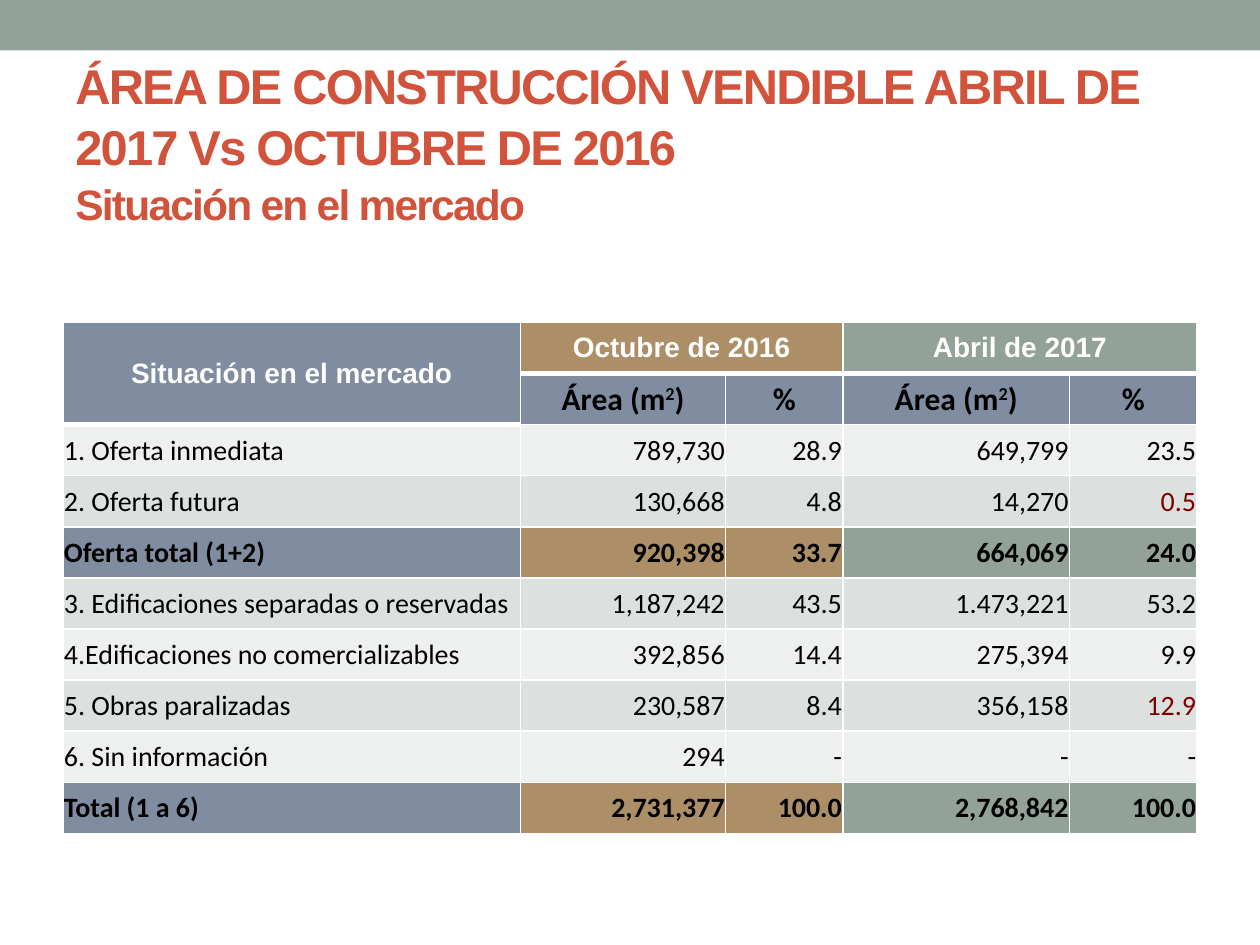
from lxml import etree
from pptx import Presentation
from pptx.dml.color import RGBColor
from pptx.enum.shapes import MSO_SHAPE
from pptx.enum.text import MSO_ANCHOR, PP_ALIGN
from pptx.oxml.ns import qn
from pptx.util import Cm, Pt

RECTANGLE = MSO_SHAPE.RECTANGLE
MIDDLE = MSO_ANCHOR.MIDDLE
LEFT, CENTER, RIGHT, JUSTIFY = (
    PP_ALIGN.LEFT, PP_ALIGN.CENTER, PP_ALIGN.RIGHT, PP_ALIGN.JUSTIFY)

WHITE, BLACK, RED, DARK_RED = "FFFFFF", "000000", "D2533C", "800000"
GREEN, BROWN, SLATE = "93A299", "AD8F67", "808DA0"
BANDS = ("EEF0EF", "DCE0DE")
TOTAL_FILLS = (SLATE, BROWN, BROWN, GREEN, GREEN)

COLUMN_WIDTHS = (9.22, 4.14, 2.36, 4.57, 2.57)
ROW_HEIGHT = 1.03
HEADINGS = {0: "Situación en el mercado", 1: "Octubre de 2016", 3: "Abril de 2017"}
MARKET_ROWS = (
    ("1. Oferta inmediata", "789,730", "28.9", "649,799", "23.5"),
    ("2. Oferta futura", "130,668", "4.8", "14,270", "0.5"),
    ("Oferta total (1+2)", "920,398", "33.7", "664,069", "24.0"),
    ("3. Edificaciones separadas o reservadas", "1,187,242", "43.5", "1.473,221", "53.2"),
    ("4.Edificaciones no comercializables", "392,856", "14.4", "275,394", "9.9"),
    ("5. Obras paralizadas", "230,587", "8.4", "356,158", "12.9"),
    ("6. Sin información", "294", "-", "-", "-"),
    ("Total (1 a 6)", "2,731,377", "100.0", "2,768,842", "100.0"),
)
HIGHLIGHTS = ("0.5", "12.9")


def color(value):
    return RGBColor.from_string(value)


def write(para, text, size=16, font="Calibri", ink=BLACK, bold=False,
          align=LEFT, spacing=None, baseline=None):
    para.alignment = align
    span = para.add_run()
    span.text = text
    span.font.size = Pt(size)
    span.font.name = font
    span.font.bold = bold
    span.font.color.rgb = color(ink)
    properties = span.font._element
    if spacing is not None:
        properties.set("spc", str(spacing))
    if baseline is not None:
        properties.set("baseline", str(baseline))


def is_heading(row, column):
    return row == 0 or (row == 1 and column == 0)


class MarketSlide:
    def __init__(self, deck):
        self.page = deck.slides.add_slide(deck.slide_layouts[6])

    def bar(self, left, top, width, height, fill):
        box = self.page.shapes.add_shape(
            RECTANGLE, Cm(left), Cm(top), Cm(width), Cm(height))
        box.shadow.inherit = False
        box.fill.solid()
        box.fill.fore_color.rgb = color(fill)
        box.line.fill.background()

    def title(self, left, top, width, height, lines):
        box = self.page.shapes.add_textbox(Cm(left), Cm(top), Cm(width), Cm(height))
        frame = box.text_frame
        frame.word_wrap = True
        frame.vertical_anchor = MIDDLE
        for index, (text, size) in enumerate(lines):
            para = frame.paragraphs[0] if index == 0 else frame.add_paragraph()
            para.line_spacing = 1.05
            write(para, text, size=size, font="Arial", ink=RED, bold=True, spacing=-100)

    def table(self, left, top, widths, row_height, row_count):
        frame = self.page.shapes.add_table(
            row_count, len(widths), Cm(left), Cm(top),
            Cm(sum(widths)), Cm(row_height * row_count))
        table = frame.table
        table.first_row = table.horz_banding = False
        for column, width in zip(table.columns, widths):
            column.width = Cm(width)
        for row in table.rows:
            row.height = Cm(row_height)
        return table

    def cell(self, table, row, column, fill):
        cell = table.cell(row, column)
        cell.vertical_anchor = MIDDLE
        thick_top = row > 0 and is_heading(row - 1, column) and not is_heading(row, column)
        self.borders(cell, 3 if thick_top else 1, 3 if is_heading(row, column) else 1)
        cell.fill.solid()
        cell.fill.fore_color.rgb = color(fill)
        if not is_heading(row, column):
            cell.margin_left = cell.margin_right = cell.margin_top = Cm(0.02)
            cell.margin_bottom = 0
        return cell.text_frame.paragraphs[0]

    def borders(self, cell, top, bottom):
        properties = cell._tc.get_or_add_tcPr()
        for side, points in (("L", 1), ("R", 1), ("T", top), ("B", bottom)):
            line = etree.SubElement(properties, qn("a:ln" + side), w=str(Pt(points)))
            paint = etree.SubElement(line, qn("a:solidFill"))
            etree.SubElement(paint, qn("a:srgbClr"), val=WHITE)


def main():
    deck = Presentation()
    deck.slide_width, deck.slide_height = Cm(25.4), Cm(19.05)
    slide = MarketSlide(deck)

    # Top band and title
    slide.bar(0, 0, 25.4, 1.02, GREEN)
    slide.title(1.27, 1.47, 22.86, 2.74, (
        ("ÁREA DE CONSTRUCCIÓN VENDIBLE ABRIL DE 2017 Vs OCTUBRE DE 2016", 27.9),
        ("Situación en el mercado", 24.3)))

    table = slide.table(1.27, 6.5, COLUMN_WIDTHS, ROW_HEIGHT, len(MARKET_ROWS) + 2)

    # Two heading rows
    for column, fill in enumerate(TOTAL_FILLS):
        para = slide.cell(table, 0, column, fill)
        if column in HEADINGS:
            write(para, HEADINGS[column], font="Arial", ink=WHITE, bold=True, align=CENTER)
        para = slide.cell(table, 1, column, SLATE)
        style = {"size": 18, "bold": True, "align": CENTER}
        if column in (1, 3):
            write(para, "Área (m", **style)
            write(para, "2", baseline=30000, **style)
            write(para, ")", **style)
        elif column:
            write(para, "%", **style)
    for first, last in (((0, 0), (1, 0)), ((0, 1), (0, 2)), ((0, 3), (0, 4))):
        table.cell(*first).merge(table.cell(*last))

    # Market rows, with totals in stronger colours
    for index, values in enumerate(MARKET_ROWS):
        is_total = "otal" in values[0]
        for column, value in enumerate(values):
            fill = TOTAL_FILLS[column] if is_total else BANDS[index % 2]
            para = slide.cell(table, index + 2, column, fill)
            write(para, value, bold=is_total,
                  ink=DARK_RED if value in HIGHLIGHTS else BLACK,
                  align=RIGHT if column else JUSTIFY)

    deck.save("out.pptx")


if __name__ == "__main__":
    main()
